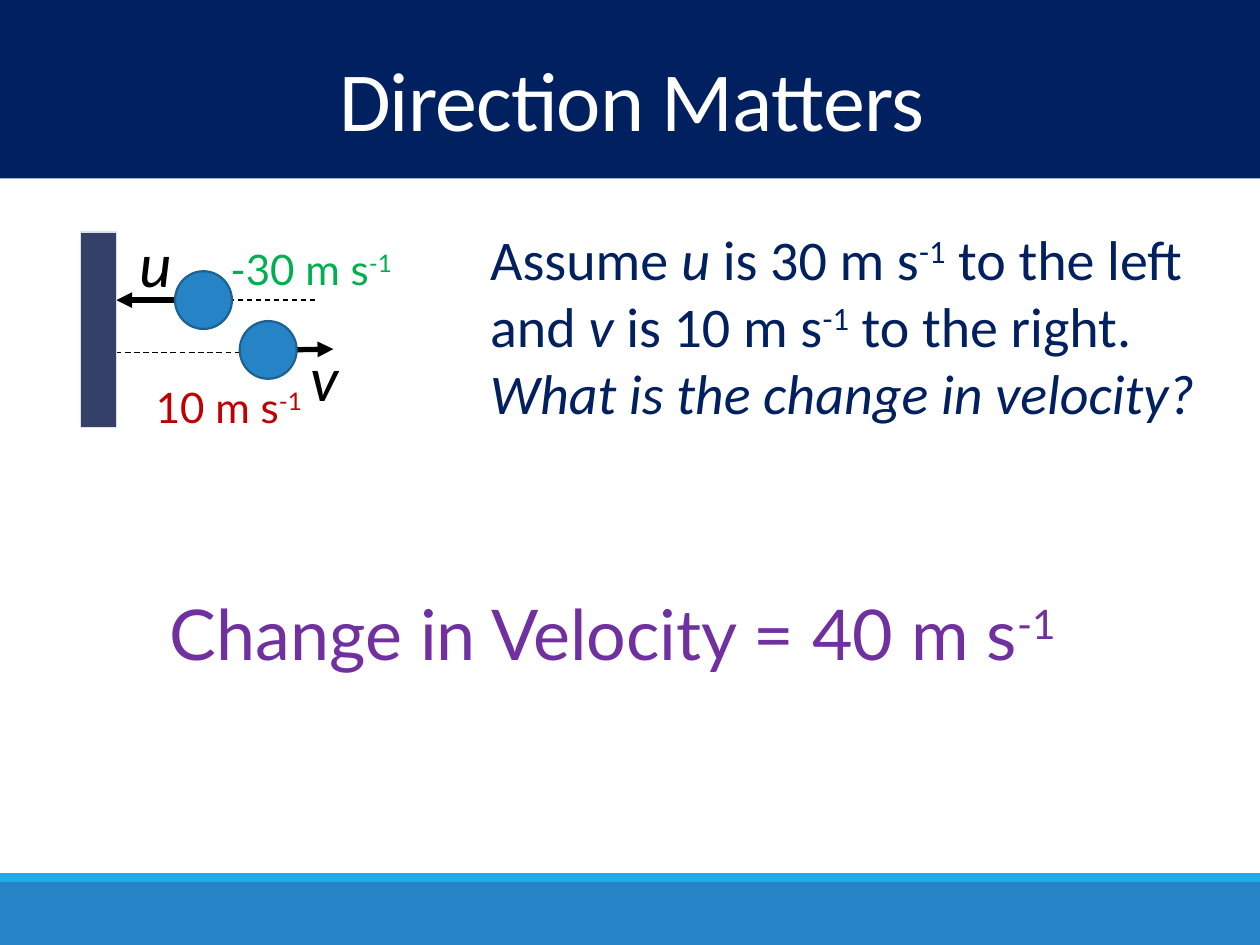
from dataclasses import dataclass

import lxml.etree
import pptx
import pptx.dml.color
import pptx.enum.dml
import pptx.enum.shapes
import pptx.enum.text
import pptx.oxml.ns
import pptx.util

Pt = pptx.util.Pt
Shapes = pptx.enum.shapes.MSO_SHAPE


@dataclass(frozen=True)
class Theme:
    navy: str = "002060"
    white: str = "FFFFFF"
    black: str = "000000"
    blue: str = "2683C6"
    cyan: str = "1CADE4"
    ball_edge: str = "1C6192"
    wall: str = "344068"
    wall_edge: str = "D9E0E6"
    green: str = "00B050"
    red: str = "C00000"
    purple: str = "7030A0"
    title_size: float = 48
    answer_size: float = 40
    symbol_size: float = 36
    question_size: float = 32
    value_size: float = 24
    main_font: str = "Calibri"
    value_font: str = "Lato"


THEME = Theme()
PLAIN, ITALIC, SUPER = "plain", "italic", "super"


def rgb(code):
    return pptx.dml.color.RGBColor.from_string(code)


def add_block(slide, kind, box, fill, edge=None, edge_width=0.75):
    block = slide.shapes.add_shape(kind, *map(Pt, box))
    block.shadow.inherit = False
    block.fill.solid()
    block.fill.fore_color.rgb = rgb(fill)
    if edge:
        block.line.color.rgb = rgb(edge)
        block.line.width = Pt(edge_width)
    else:
        block.line.fill.background()


def add_label(slide, box, pieces, size, color, font, wrap=True):
    label = slide.shapes.add_textbox(*map(Pt, box))
    frame = label.text_frame
    frame.word_wrap = wrap
    frame.auto_size = pptx.enum.text.MSO_AUTO_SIZE.SHAPE_TO_FIT_TEXT
    for words, style in pieces:
        run = frame.paragraphs[0].add_run()
        run.text = words
        run.font.name = font
        run.font.size = Pt(size)
        run.font.color.rgb = rgb(color)
        run.font.italic = style == ITALIC
        if style == SUPER:
            run.font._element.set("baseline", "30000")


def add_line(slide, start, end, arrow=False):
    line = slide.shapes.add_connector(
        pptx.enum.shapes.MSO_CONNECTOR.STRAIGHT, *map(Pt, start + end))
    line.line.color.rgb = rgb(THEME.black)
    line.line.width = Pt(3 if arrow else 0.75)
    qn = pptx.oxml.ns.qn
    if arrow:
        outline = line.line._get_or_add_ln()
        lxml.etree.SubElement(outline, qn("a:tailEnd"), type="triangle")
    else:
        line.line.dash_style = pptx.enum.dml.MSO_LINE.DASH
    lxml.etree.SubElement(line._element.spPr, qn("a:effectLst"))


def build_footer(slide, box):
    left, top, width, height = box
    stripe = 5
    add_block(slide, Shapes.RECTANGLE, (left, top + stripe, width, height - stripe), THEME.blue)
    add_block(slide, Shapes.RECTANGLE, (left, top, width, stripe), THEME.cyan)


def build_header(slide, box, heading):
    left, top, width, height = box
    add_block(slide, Shapes.RECTANGLE, box, THEME.navy)
    title = slide.shapes.title
    slide.shapes._spTree.append(title._element)
    title.left, title.top = Pt(left + 2), Pt(top + 30)
    title.width, title.height = Pt(width - 2), Pt(60.5)
    frame = title.text_frame
    frame.text = heading
    frame.vertical_anchor = pptx.enum.text.MSO_ANCHOR.MIDDLE
    paragraph = frame.paragraphs[0]
    paragraph.alignment = pptx.enum.text.PP_ALIGN.CENTER
    paragraph.line_spacing = 0.85
    font = paragraph.runs[0].font
    font.name = THEME.main_font
    font.size = Pt(THEME.title_size)
    font.color.rgb = rgb(THEME.white)
    font._element.set("spc", "-50")


def build_collision(slide, box):
    left, top, width, height = box

    def at(x, y):
        return left + x, top + y

    wall_width, ball = 20.5, (32.5, 33)
    before, after = 39, 69
    add_line(slide, at(116.5, after - 1.5), at(144.5, after - 2), arrow=True)
    add_line(slide, at(wall_width, after), at(81, after))
    add_line(slide, at(56, before), at(wall_width, before), arrow=True)
    add_line(slide, at(74.5, before), at(134.5, before))
    add_line(slide, at(62.5, after), at(122.5, after))
    add_block(slide, Shapes.RECTANGLE, (left, top, wall_width, height),
              THEME.wall, THEME.wall_edge)
    for x, y in ((54, 22.5), (91, 51)):
        add_block(slide, Shapes.OVAL, at(x, y) + ball, THEME.blue, THEME.ball_edge, 1.25)

    for symbol, x, y in (("u", 26.5, -8), ("v", 124.5, 57.5)):
        add_label(slide, at(x, y) + (54, 51), [(symbol, ITALIC)],
                  THEME.symbol_size, THEME.black, THEME.main_font)
    for speed, x, y, label_width, color in (
            ("-30 m s", 78.5, 3, 110, THEME.green),
            ("10 m s", 36, 82, 100, THEME.red)):
        add_label(slide, at(x, y) + (label_width, 36), [(speed, PLAIN), ("-1", SUPER)],
                  THEME.value_size, color, THEME.value_font, wrap=False)


def build_question(slide, box):
    pieces = [
        ("Assume ", PLAIN), ("u ", ITALIC), ("is 30 m s", PLAIN), ("-1", SUPER),
        (" to the left and ", PLAIN), ("v ", ITALIC), ("is 10 m s", PLAIN),
        ("-1", SUPER), (" to the right.", PLAIN),
        (" What is the change in velocity?", ITALIC),
    ]
    add_label(slide, box, pieces, THEME.question_size, THEME.navy, THEME.main_font)


def build_answer(slide, box):
    add_label(slide, box, [("Change in Velocity = 40 m s", PLAIN), ("-1", SUPER)],
              THEME.answer_size, THEME.purple, THEME.value_font, wrap=False)


def main():
    deck = pptx.Presentation()
    deck.slide_width, deck.slide_height = Pt(720), Pt(540)
    slide = deck.slides.add_slide(deck.slide_layouts[5])
    build_footer(slide, (0, 499, 720, 41))
    build_header(slide, (0, 0, 720, 102), "Direction Matters")
    build_collision(slide, (46, 132.5, 190, 112))
    build_question(slide, (273, 124.5, 435.5, 124))
    build_answer(slide, (90, 334, 540, 55.5))
    deck.save("out.pptx")


if __name__ == "__main__":
    main()
